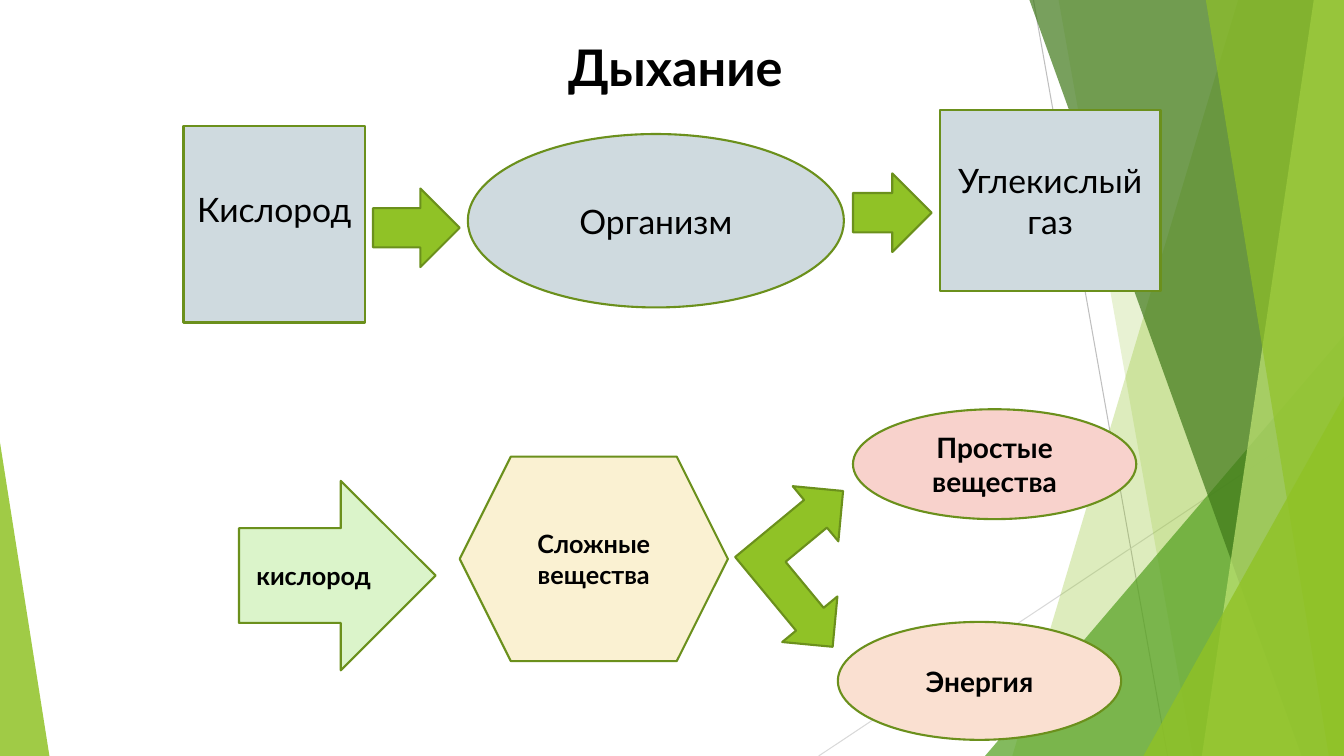
from lxml import etree
from pptx import Presentation
from pptx.dml.color import RGBColor
from pptx.enum.shapes import MSO_CONNECTOR, MSO_SHAPE as Preset
from pptx.enum.text import MSO_ANCHOR, PP_ALIGN
from pptx.oxml.ns import qn
from pptx.util import Inches, Pt

# Grid of square cells: 1333 columns by 750 rows
CELL = Inches(0.01)
COLS, ROWS = 1333, 750

BLACK = RGBColor(0x00, 0x00, 0x00)
LIME = RGBColor(0x90, 0xC2, 0x26)
PALE_LIME = RGBColor(0xC0, 0xE4, 0x74)
GREEN = RGBColor(0x54, 0xA0, 0x21)
FOREST = RGBColor(0x3F, 0x78, 0x19)
OUTLINE = RGBColor(0x6B, 0x90, 0x1C)
GREY_BLUE = RGBColor(0xCF, 0xDA, 0xDF)
MINT = RGBColor(0xDB, 0xF4, 0xCA)
CREAM = RGBColor(0xFA, 0xF1, 0xD2)
PINK = RGBColor(0xF8, 0xD2, 0xCC)
PEACH = RGBColor(0xFA, 0xE0, 0xD1)
GREY = RGBColor(0xBF, 0xBF, 0xBF)
LIGHT_GREY = RGBColor(0xD9, 0xD9, 0xD9)


def paint(shape, color, opacity=None):
    """Fill a shape; with an opacity in percent it is a facet without outline."""
    shape.shadow.inherit = False
    shape.fill.solid()
    shape.fill.fore_color.rgb = color
    if opacity is None:
        shape.line.color.rgb = OUTLINE
        shape.line.width = Pt(1.5)
    else:
        shape.line.fill.background()
        rgb = shape.fill._xPr.find(".//" + qn("a:srgbClr"))
        etree.SubElement(rgb, qn("a:alpha"), val=str(opacity * 1000))


def write(shape, text, size=24, bold=False, lift=0):
    """Centre text in a shape, with extra cells of space below it."""
    frame = shape.text_frame
    frame.word_wrap = True
    frame.vertical_anchor = MSO_ANCHOR.MIDDLE
    frame.margin_bottom = (5 + lift) * CELL
    paragraph = frame.paragraphs[0]
    paragraph.alignment = PP_ALIGN.CENTER
    run = paragraph.add_run()
    run.text = text
    run.font.name = "Lato"
    run.font.size = Pt(size)
    run.font.bold = bold
    run.font.color.rgb = BLACK


deck = Presentation()
deck.slide_width, deck.slide_height = COLS * CELL, ROWS * CELL
slide = deck.slides.add_slide(deck.slide_layouts[6])
shapes = slide.shapes

# Thin lines behind the facets
for ends, color in (
    ((1025, 0, 1158, ROWS), GREY),
    ((COLS, 403, 812, ROWS), LIGHT_GREY),
):
    ray = shapes.add_connector(MSO_CONNECTOR.STRAIGHT, *(n * CELL for n in ends))
    ray.line.color.rgb = color
    ray.line.width = Pt(0.75)
    etree.SubElement(ray._element.spPr, qn("a:effectLst"))

# Facets: a band runs from its top and bottom columns to the right edge,
# a corner triangle is (left, width, height, apex) and stands on the bottom edge
facets = [
    ((1228, 1004), LIME, 30),
    ((1050, 1183), LIME, 20),
    ((977, 356, 417, 1), GREEN, 72),
    ((1021, 1291), FOREST, 70),
    ((1303, 1192), PALE_LIME, 70),
    ((1196, 1318), LIME, 65),
    ((1134, 199, 357, 1), LIME, 80),
    ((0, 49, 311, 0), LIME, 85),
]
for geometry, color, opacity in facets:
    if len(geometry) == 2:
        top, bottom = geometry
        outline = shapes.build_freeform(top, 0, scale=CELL)
        outline.add_line_segments([(COLS, 0), (COLS, ROWS), (bottom, ROWS)])
        facet = outline.convert_to_shape()
    else:
        left, width, height, apex = geometry
        facet = shapes.add_shape(
            Preset.ISOSCELES_TRIANGLE,
            left * CELL, (ROWS - height) * CELL, width * CELL, height * CELL)
        facet.adjustments[0] = apex
    paint(facet, color, opacity)

title = shapes.add_textbox(*(n * CELL for n in (260, 23, 820, 86)))
write(title, "Дыхание", size=36, bold=True)

# Both schemes: preset, place in cells, fill, text, text format
small, medium = dict(size=18, bold=True), dict(size=20, bold=True)
steps = [
    (Preset.RECTANGLE, (182, 125, 180, 195), GREY_BLUE, "Кислород", dict(lift=30)),
    (Preset.RECTANGLE, (932, 109, 219, 180), GREY_BLUE, "Углекислый газ", {}),
    (Preset.OVAL, (464, 133, 373, 172), GREY_BLUE, "Организм", {}),
    (Preset.RIGHT_ARROW, (370, 187, 86, 78), LIME, None, {}),
    (Preset.RIGHT_ARROW, (846, 172, 78, 78), LIME, None, {}),
    (Preset.RIGHT_ARROW, (237, 477, 195, 188), MINT, "кислород", small),
    (Preset.HEXAGON, (456, 453, 266, 203), CREAM, "Сложные вещества", small),
    (Preset.LEFT_UP_ARROW, (735, 488, 142, 148), LIME, None, {}),
    (Preset.OVAL, (846, 406, 281, 109), PINK, "Простые вещества", medium),
    (Preset.OVAL, (831, 617, 281, 117), PEACH, "Энергия", medium),
]
for preset, place, color, text, text_format in steps:
    step = shapes.add_shape(preset, *(n * CELL for n in place))
    paint(step, color)
    if preset == Preset.LEFT_UP_ARROW:
        step.rotation = 140.4
    if text:
        write(step, text, **text_format)

deck.save("out.pptx")
